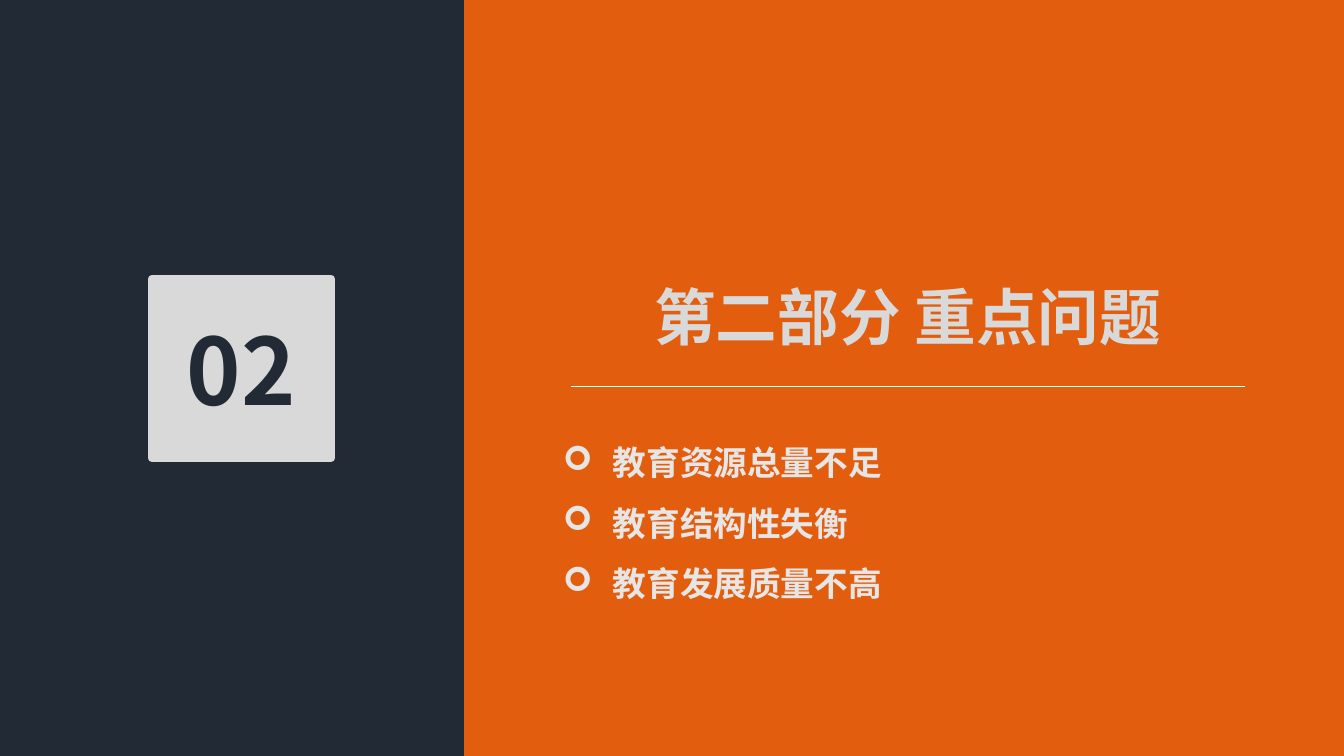
from lxml import etree
from pptx import Presentation
from pptx import util as u
from pptx.dml.color import RGBColor
from pptx.enum import shapes, text
from pptx.oxml import ns

SCALE = 914400 / 100.8  # EMU per px
FONT = "Noto Sans CJK SC"
NAVY, ORANGE, GREY, PALE, WHITE = "222A35", "E25E0E", "D9D9D9", "E7E6E6", "FFFFFF"
PROBLEMS = ["教育资源总量不足", "教育结构性失衡", "教育发展质量不高"]


def px(*lengths):
    return [u.Emu(round(length * SCALE)) for length in lengths]


def color(value):
    return RGBColor.from_string(value)


def add_bullet(para, mark, indent):
    props = para._p.get_or_add_pPr()
    props.set("marL", str(px(indent)[0]))
    props.set("indent", str(-px(indent)[0]))
    etree.SubElement(props, ns.qn("a:buFont"), typeface="Wingdings")
    etree.SubElement(props, ns.qn("a:buChar"), char=mark)


def write(shape, lines, size, fill, align=text.PP_ALIGN.LEFT,
          anchor=text.MSO_ANCHOR.MIDDLE, wrap=True, spacing=1.0, bullet=None):
    frame = shape.text_frame
    frame.word_wrap = wrap
    frame.auto_size = text.MSO_AUTO_SIZE.NONE
    frame.vertical_anchor = anchor
    for index, line in enumerate(lines):
        para = frame.add_paragraph() if index else frame.paragraphs[0]
        para.alignment = align
        para.line_spacing = spacing
        if bullet:
            add_bullet(para, bullet, 50)
        span = para.add_run()
        span.text = line
        span.font.size = u.Pt(size)
        span.font.bold = True
        span.font.name = FONT
        span.font.color.rgb = color(fill)
        etree.SubElement(span._r.get_or_add_rPr(), ns.qn("a:ea"), typeface=FONT)


def add_block(page, left, top, width, height, fill, border=0):
    block = page.shapes.add_shape(shapes.MSO_SHAPE.RECTANGLE,
                                  *px(left, top, width, height))
    block.shadow.inherit = False
    block.fill.solid()
    block.fill.fore_color.rgb = color(fill)
    if border:
        block.line.color.rgb = color(fill)
        block.line.width = u.Pt(border)
    else:
        block.line.fill.background()
    return block


def add_rule(page, left, right, top):
    rule = page.shapes.add_connector(shapes.MSO_CONNECTOR.STRAIGHT,
                                     *px(left, top, right, top))
    rule.line.color.rgb = color(WHITE)
    rule.line.width = u.Pt(0.5)
    etree.SubElement(rule._element.spPr, ns.qn("a:effectLst"))


def main():
    deck = Presentation()
    deck.slide_width, deck.slide_height = px(1344, 756)
    page = deck.slides.add_slide(deck.slide_layouts[5])
    page.background.fill.solid()
    page.background.fill.fore_color.rgb = color(NAVY)

    # Two panels
    add_block(page, 0, 0, 1344, 756, ORANGE)
    add_block(page, 0, 0, 464, 756, NAVY)

    # Section title, raised above the panels
    title = page.shapes.title
    title.left, title.top, title.width, title.height = px(640, 273, 536, 85)
    page.shapes._spTree.append(title._element)
    write(title, ["第二部分 重点问题"], 44, GREY,
          align=text.PP_ALIGN.CENTER, wrap=False)
    add_rule(page, 571, 1245, 386)

    # Section number
    number = add_block(page, 152, 279, 179, 179, GREY, border=6)
    write(number, ["02"], 66, NAVY, align=text.PP_ALIGN.CENTER)

    # Key problems
    box = page.shapes.add_textbox(*px(553, 417, 655, 187))
    write(box, PROBLEMS, 24, PALE, anchor=text.MSO_ANCHOR.TOP,
          spacing=1.5, bullet="➢")

    deck.save("out.pptx")


if __name__ == "__main__":
    main()
